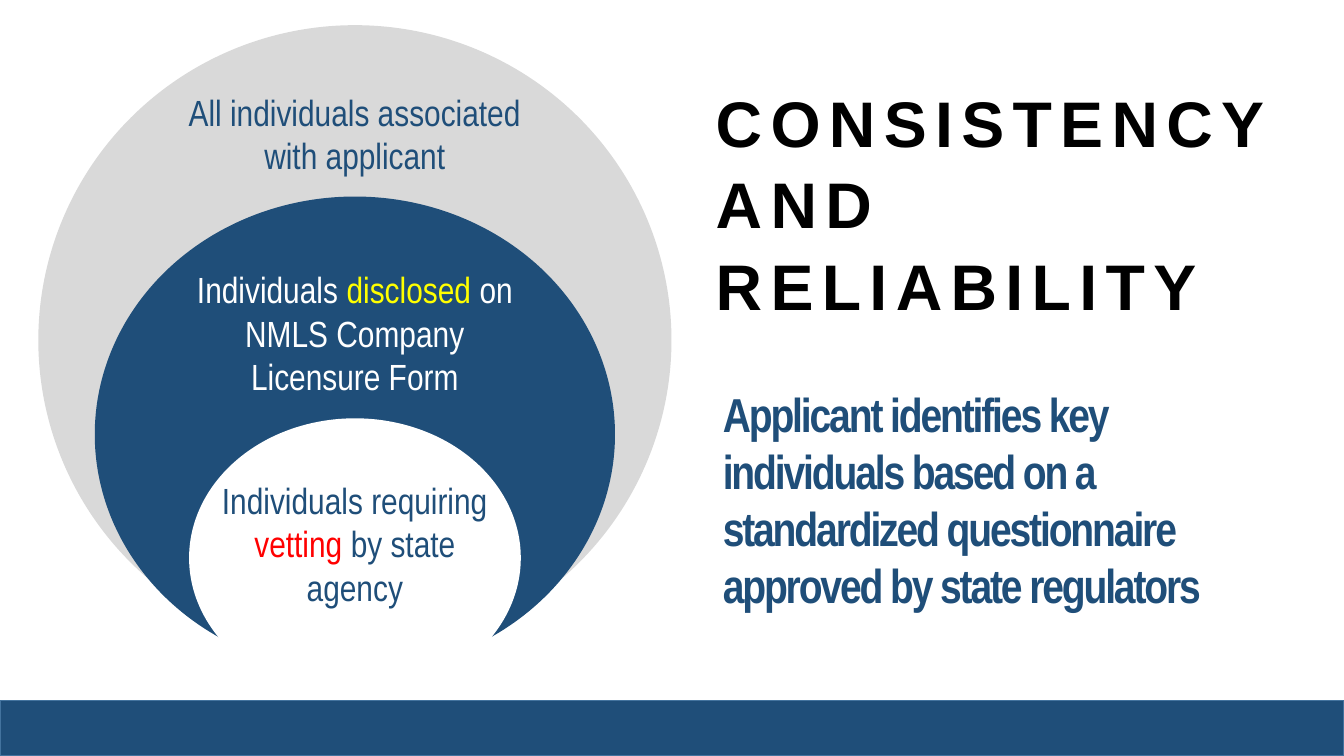
import pptx
import pptx.util
import pptx.dml.color
import pptx.enum.shapes
import pptx.enum.text

NAVY, GREY, WHITE, BLACK = "1F4E79", "D9D9D9", "FFFFFF", "000000"
YELLOW, RED, EDGE = "FFFF00", "FF0000", "43739E"
WIDTH, HEIGHT = 13.33, 7.5
BAR_TOP = 6.95
CIRCLE_CENTRE = 3.52

# Nested circles: top, width, height, fill, then label top, width, height, spans
CIRCLES = [
    (0.25, 6.28, 6.25, GREY, 0.84, 4.08, 0.99,
     [("All individuals associated with applicant", NAVY)]),
    (1.95, 5.16, 4.72, NAVY, 2.6, 3.5, 1.44,
     [("Individuals ", WHITE), ("disclosed", YELLOW),
      (" on NMLS Company Licensure Form", WHITE)]),
    (4.15, 3.29, 2.77, WHITE, 4.69, 2.92, 1.44,
     [("Individuals requiring ", NAVY), ("vetting", RED),
      (" by state agency", NAVY)]),
]
TITLE = [[(word, BLACK)] for word in ("CONSISTENCY", "AND", "RELIABILITY")]
MESSAGE = [[("Applicant identifies key individuals based on a standardized "
             "questionnaire approved by state regulators", NAVY)]]


def color(code):
    return pptx.dml.color.RGBColor.from_string(code)


def inches(*lengths):
    return [pptx.util.Inches(length) for length in lengths]


def add_filled(page, kind, place, fill, edge=None):
    shape = page.shapes.add_shape(kind, *inches(*place))
    shape.shadow.inherit = False
    shape.fill.solid()
    shape.fill.fore_color.rgb = color(fill)
    if edge:
        shape.line.color.rgb = color(edge)
        shape.line.width = pptx.util.Pt(1)
    else:
        shape.line.fill.background()


def add_text(page, place, paragraphs, font, size, bold=False, centred=False,
             tracking=0, line_spacing=None):
    box = page.shapes.add_textbox(*inches(*place))
    frame = box.text_frame
    frame.word_wrap = True
    for index, spans in enumerate(paragraphs):
        para = frame.add_paragraph() if index else frame.paragraphs[0]
        if centred:
            para.alignment = pptx.enum.text.PP_ALIGN.CENTER
        if line_spacing:
            para.line_spacing = line_spacing
        para.font.name = font
        para.font.size = pptx.util.Pt(size)
        para.font.bold = bold
        for text, code in spans:
            span = para.add_run()
            span.text = text
            span.font.color.rgb = color(code)
            if tracking:  # letter spacing in hundredths of a point
                span._r.get_or_add_rPr().set("spc", str(int(tracking * 100)))


def main():
    deck = pptx.Presentation()
    deck.slide_width, deck.slide_height = inches(WIDTH, HEIGHT)
    page = deck.slides.add_slide(deck.slide_layouts[6])
    shapes = pptx.enum.shapes.MSO_SHAPE

    # Bottom bar
    add_filled(page, shapes.RECTANGLE,
               (0, BAR_TOP, WIDTH, HEIGHT - BAR_TOP), NAVY, EDGE)

    # Title and message
    add_text(page, (7, 0.74, 5.75, 2.42), TITLE, "Arial", 46, bold=True,
             tracking=6, line_spacing=1.05)
    add_text(page, (7.07, 3.77, 5.72, 2.39), MESSAGE, "Arial Narrow", 34,
             bold=True, tracking=-1.5)

    # Circles, largest first, with labels on one centre line
    for top, width, height, fill, text_top, text_width, text_height, spans in CIRCLES:
        add_filled(page, shapes.OVAL,
                   (CIRCLE_CENTRE - width / 2, top, width, height), fill)
        add_text(page, (CIRCLE_CENTRE - text_width / 2, text_top, text_width, text_height),
                 [spans], "Arial Narrow", 26, centred=True)

    deck.save("out.pptx")


if __name__ == "__main__":
    main()
